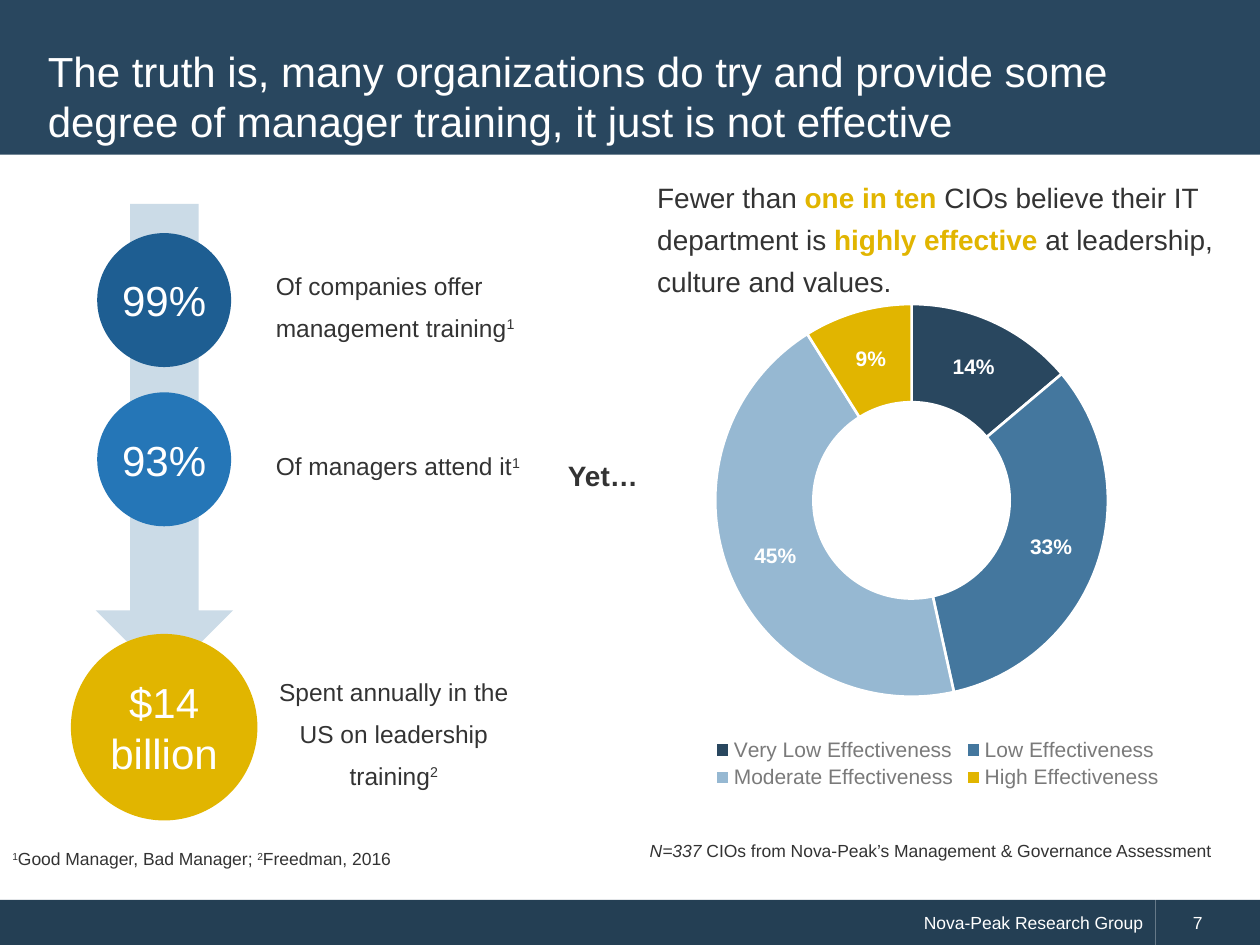
from lxml.etree import SubElement
from pptx import Presentation
from pptx.chart.data import CategoryChartData
from pptx.dml.color import RGBColor
from pptx.enum.chart import XL_CHART_TYPE as CHART, XL_LEGEND_POSITION as LEGEND
from pptx.enum.shapes import MSO_SHAPE as SHAPE
from pptx.enum.text import MSO_ANCHOR as ANCHOR, MSO_AUTO_SIZE as AUTO, PP_ALIGN as ALIGN
from pptx.oxml.ns import qn
from pptx.util import Cm, Pt

COLORS = {
    "header": "29475F", "footer": "243F54", "arrow": "CBDBE7", "gold": "E1B500",
    "deep": "1E5E92", "blue": "2576B7", "steel": "44779E", "pale": "96B8D2",
    "text": "333333", "legend": "7A7A7A", "white": "FFFFFF",
}
FONT = "Arial"
SUPER = {"sup": True}
KEY = {"color": "gold", "bold": True}


def rgb(name):
    return RGBColor.from_string(COLORS[name])


def style_font(font, size, color, bold=False, italic=False):
    font.name, font.size = FONT, Pt(size)
    font.bold, font.italic = bold, italic
    font.color.rgb = rgb(color)


def write(tf, *runs, size=14, color="text", bold=False, align=ALIGN.LEFT,
          anchor=ANCHOR.TOP, spaced=False, wrap=True, margins=None):
    tf.word_wrap, tf.auto_size, tf.vertical_anchor = wrap, AUTO.NONE, anchor
    if margins is not None:
        tf.margin_left = tf.margin_right = tf.margin_top = tf.margin_bottom = Cm(margins)
    p = tf.paragraphs[0]
    p.alignment = align
    if spaced:
        p.line_spacing, p.space_before = Pt(24), Pt(12)
    for run in runs:
        words, own = (run, {}) if isinstance(run, str) else run
        r = p.add_run()
        r.text = words
        style_font(r.font, size, own.get("color", color),
                   own.get("bold", bold), own.get("italic", False))
        if own.get("sup"):
            r._r.get_or_add_rPr().set("baseline", "30000")


class SlideBuilder:
    def __init__(self, prs):
        self.s = prs.slides.add_slide(prs.slide_layouts[5])

    def title(self, words, box):
        sp = self.s.shapes.title
        sp.left, sp.top, sp.width, sp.height = map(Cm, box)
        sp.element.getparent().append(sp.element)
        write(sp.text_frame, words, size=24, color="white", anchor=ANCHOR.MIDDLE)

    def shape(self, kind, box, fill):
        sp = self.s.shapes.add_shape(kind, *map(Cm, box))
        sp.shadow.inherit = False
        sp.fill.solid()
        sp.fill.fore_color.rgb = rgb(fill)
        sp.line.fill.background()
        return sp

    def footer(self, words, box, align, indent=0.25):
        tf = self.shape(SHAPE.RECTANGLE, box, "footer").text_frame
        write(tf, words, size=10, color="white", align=align, anchor=ANCHOR.MIDDLE)
        tf.margin_left = Cm(indent)

    def circle(self, words, left, top, size, fill):
        sp = self.shape(SHAPE.OVAL, (left, top, size, size), fill)
        write(sp.text_frame, words, size=24, color="white", align=ALIGN.CENTER,
              anchor=ANCHOR.MIDDLE, margins=0)

    def text(self, box, *runs, **fmt):
        write(self.s.shapes.add_textbox(*map(Cm, box)).text_frame, *runs, **fmt)

    def doughnut(self, box, points, layout):
        data = CategoryChartData(number_format="0%")
        data.categories = [name for name, _, _ in points]
        data.add_series("Series 1", [value for _, value, _ in points])
        chart = self.s.shapes.add_chart(CHART.DOUGHNUT, *map(Cm, box), data).chart
        style_font(chart.font, 10, "text")
        chart.has_title = False
        chart.has_legend = True
        chart.legend.position = LEGEND.BOTTOM
        chart.legend.include_in_layout = False
        style_font(chart.legend.font, 12, "legend")

        plot = chart.plots[0]
        plot.vary_by_categories = True
        plot.has_data_labels = True
        labels = plot.data_labels
        labels.show_value, labels.show_percentage = True, False
        labels.number_format, labels.number_format_is_linked = "0%", False
        style_font(labels.font, 12, "white", bold=True)
        for i, (_, _, color) in enumerate(points):
            fmt = plot.series[0].points[i].format
            fmt.fill.solid()
            fmt.fill.fore_color.rgb = rgb(color)
            fmt.line.color.rgb = rgb("white")
            fmt.line.width = Pt(1.5)

        area = chart.element.find(".//" + qn("c:plotArea"))
        area.find(".//" + qn("c:holeSize")).set("val", "60")
        for old in area.findall(qn("c:layout")):
            area.remove(old)
        node = SubElement(area, qn("c:layout"))
        area.insert(0, node)
        manual = SubElement(node, qn("c:manualLayout"))
        settings = [("layoutTarget", "inner"), ("xMode", "edge"), ("yMode", "edge")]
        for tag, value in settings + list(zip("xywh", layout)):
            SubElement(manual, qn("c:" + tag)).set("val", str(value))


def main():
    prs = Presentation()
    prs.slide_width, prs.slide_height = Cm(25.4), Cm(19.05)
    b = SlideBuilder(prs)

    b.footer("Nova-Peak Research Group", (0, 18.14, 23.29, 0.91), ALIGN.RIGHT)
    b.footer("7", (23.29, 18.14, 2.11, 0.91), ALIGN.LEFT, indent=0.76)
    b.shape(SHAPE.RECTANGLE, (0, 0, 25.4, 3.12), "header")
    b.title("The truth is, many organizations do try and provide some degree of "
            "manager training, it just is not effective", (0.71, 0.71, 23.95, 2.44))

    b.shape(SHAPE.DOWN_ARROW, (1.93, 4.11, 2.77, 9.58), "arrow")
    axis = 3.31
    stats = [
        ("99%", 4.7, 2.7, "deep", "Of companies offer management training", "1", 5.61, ALIGN.LEFT),
        ("93%", 7.91, 2.7, "blue", "Of managers attend it", "1", 5.61, ALIGN.LEFT),
        ("$14 billion", 12.78, 3.76, "gold",
         "Spent annually in the US on leadership training", "2", 5.26, ALIGN.CENTER),
    ]
    for figure, top, size, fill, words, note, width, align in stats:
        b.circle(figure, axis - size / 2, top, size, fill)
        b.text((5.31, top, width, size), words, (note, SUPER),
               align=align, anchor=ANCHOR.MIDDLE, spaced=True)

    b.text((11.2, 9.12, 1.93, 0.94), "Yet…", size=16, bold=True, wrap=False)
    b.doughnut((11.43, 3.15, 14.94, 12.85), [
        ("Very Low Effectiveness", 0.14, "header"),
        ("Low Effectiveness", 0.33, "steel"),
        ("Moderate Effectiveness", 0.45, "pale"),
        ("High Effectiveness", 0.09, "gold"),
    ], (0.2, 0.16, 0.53, 0.76))
    b.text((13, 3.35, 12.07, 2.82), "Fewer than ", ("one in ten ", KEY),
           "CIOs believe their IT department is ", ("highly effective ", KEY),
           "at leadership, culture and values.", size=16, spaced=True)

    b.text((11.38, 16.81, 13.28, 0.69), ("N=337", {"italic": True}),
           " CIOs from Nova-Peak’s Management & Governance Assessment",
           size=10, align=ALIGN.RIGHT)
    b.text((0, 16.97, 13.46, 0.69), ("1", SUPER), "Good Manager, Bad Manager; ",
           ("2", SUPER), "Freedman, 2016", size=10)
    prs.save("out.pptx")


if __name__ == "__main__":
    main()
